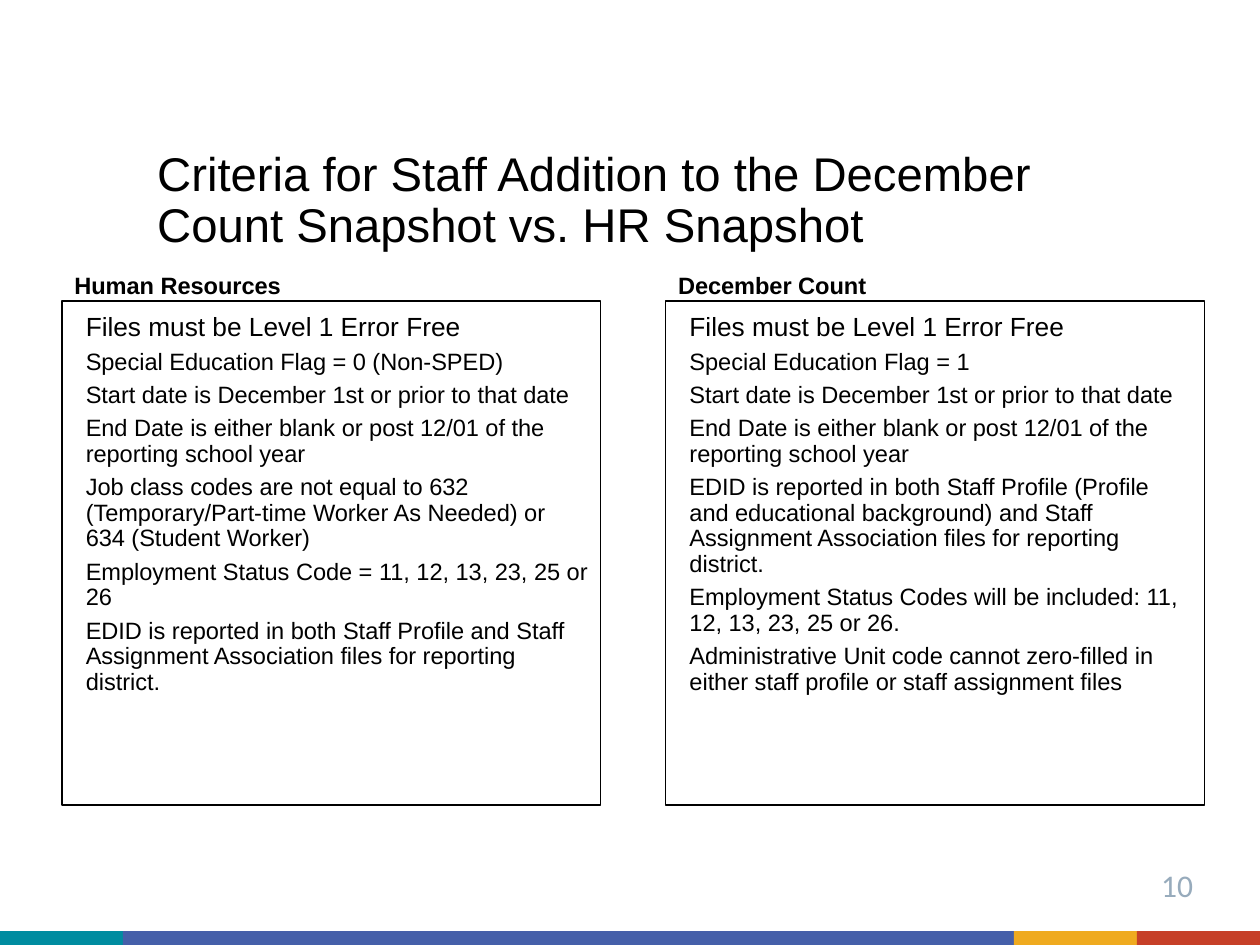
from dataclasses import dataclass

from pptx import Presentation
from pptx.dml.color import RGBColor
from pptx.enum.shapes import MSO_SHAPE
from pptx.enum.text import MSO_ANCHOR, MSO_AUTO_SIZE
from pptx.util import Cm, Pt

RECT = MSO_SHAPE.RECTANGLE
TOP, BOTTOM = MSO_ANCHOR.TOP, MSO_ANCHOR.BOTTOM
GROW = MSO_AUTO_SIZE.SHAPE_TO_FIT_TEXT


@dataclass(frozen=True)
class Theme:
    font: str = "Arial"
    number_font: str = "Calibri"
    ink: str = "000000"
    number_ink: str = "97ABBC"
    bars: tuple = ("008CA0", "455FA9", "EFAA1F", "C63F28")
    title: float = 27
    lead: float = 15
    body: float = 13.5
    number: float = 18


class Deck:
    """Draws themed elements on the current slide."""

    def __init__(self, prs, theme):
        self.theme = theme
        self.s = prs.slides.add_slide(prs.slide_layouts[6])

    def style(self, p, size, bold=False, font=None, color=None):
        for r in p.runs:
            r.font.name = font or self.theme.font
            r.font.size = Pt(size)
            r.font.bold = bold
            r.font.color.rgb = RGBColor.from_string(color or self.theme.ink)

    def frame(self, sp, anchor=TOP, inset=0.25):
        tf = sp.text_frame
        tf.word_wrap = True
        tf.vertical_anchor = anchor
        tf.margin_left = tf.margin_right = Cm(0.25)
        tf.margin_top = tf.margin_bottom = Cm(inset)
        return tf

    def box(self, left, top, width, height):
        return self.s.shapes.add_textbox(Cm(left), Cm(top), Cm(width), Cm(height))

    def bars(self, top, height, widths):
        left = 0
        for width, color in zip(widths, self.theme.bars):
            sp = self.s.shapes.add_shape(RECT, Cm(left), Cm(top), Cm(width), Cm(height))
            sp.shadow.inherit = False
            sp.fill.solid()
            sp.fill.fore_color.rgb = RGBColor.from_string(color)
            sp.line.fill.background()
            left += width

    def title(self, text, left, top, width, height):
        tf = self.frame(self.box(left, top, width, height), BOTTOM)
        tf.text = text
        tf.paragraphs[0].line_spacing = 0.9
        self.style(tf.paragraphs[0], self.theme.title)

    def heading(self, text, left, top):
        tf = self.frame(self.box(left, top, 5.72, 0.84), inset=0.13)
        tf.auto_size = GROW
        tf.text = text
        self.style(tf.paragraphs[0], self.theme.body, bold=True)

    def panel(self, items, left, top, width, height):
        sp = self.box(left, top, width, height)
        sp.line.color.rgb = RGBColor.from_string(self.theme.ink)
        sp.line.width = Pt(0.75)
        tf = self.frame(sp)
        tf.text = "\n".join(items)
        for i, p in enumerate(tf.paragraphs):
            p._p.get_or_add_pPr().set("marL", str(Cm(0.23)))
            p.line_spacing = 0.9
            p.space_before = Pt(4.5 if i else 0)
            self.style(p, self.theme.body if i else self.theme.lead)

    def number(self, text, left, top):
        tf = self.frame(self.box(left, top, 1.52, 1.17))
        tf.text = text
        self.style(tf.paragraphs[0], self.theme.number,
                   font=self.theme.number_font, color=self.theme.number_ink)


LEVEL = "Files must be Level 1 Error Free"
START = "Start date is December 1st or prior to that date"
END = "End Date is either blank or post 12/01 of the reporting school year"
CRITERIA = {
    "Human Resources": [
        LEVEL,
        "Special Education Flag = 0 (Non-SPED)",
        START,
        END,
        "Job class codes are not equal to 632 (Temporary/Part-time Worker As Needed) "
        "or 634 (Student Worker)",
        "Employment Status Code = 11, 12, 13, 23, 25 or 26",
        "EDID is reported in both Staff Profile and Staff Assignment Association files "
        "for reporting district.",
    ],
    "December Count": [
        LEVEL,
        "Special Education Flag = 1",
        START,
        END,
        "EDID is reported in both Staff Profile (Profile and educational background) "
        "and Staff Assignment Association files for reporting district.",
        "Employment Status Codes will be included: 11, 12, 13, 23, 25 or 26.",
        "Administrative Unit code cannot zero-filled in either staff profile "
        "or staff assignment files",
    ],
}


def main():
    prs = Presentation()
    prs.slide_width, prs.slide_height = Cm(25.4), Cm(19.05)
    deck = Deck(prs, Theme())
    deck.bars(18.77, 0.28, (2.48, 17.96, 2.48, 2.48))
    deck.title("Criteria for Staff Addition to the December Count Snapshot vs. HR Snapshot",
               2.92, 2.95, 19.35, 2.39)
    for i, (heading, items) in enumerate(CRITERIA.items()):
        left = 1.25 + i * 12.17
        deck.heading(heading, left, 5.33)
        deck.panel(items, left, 6.07, 10.86, 10.16)
    deck.number("10", 23.16, 17.2)
    prs.save("out.pptx")


if __name__ == "__main__":
    main()
